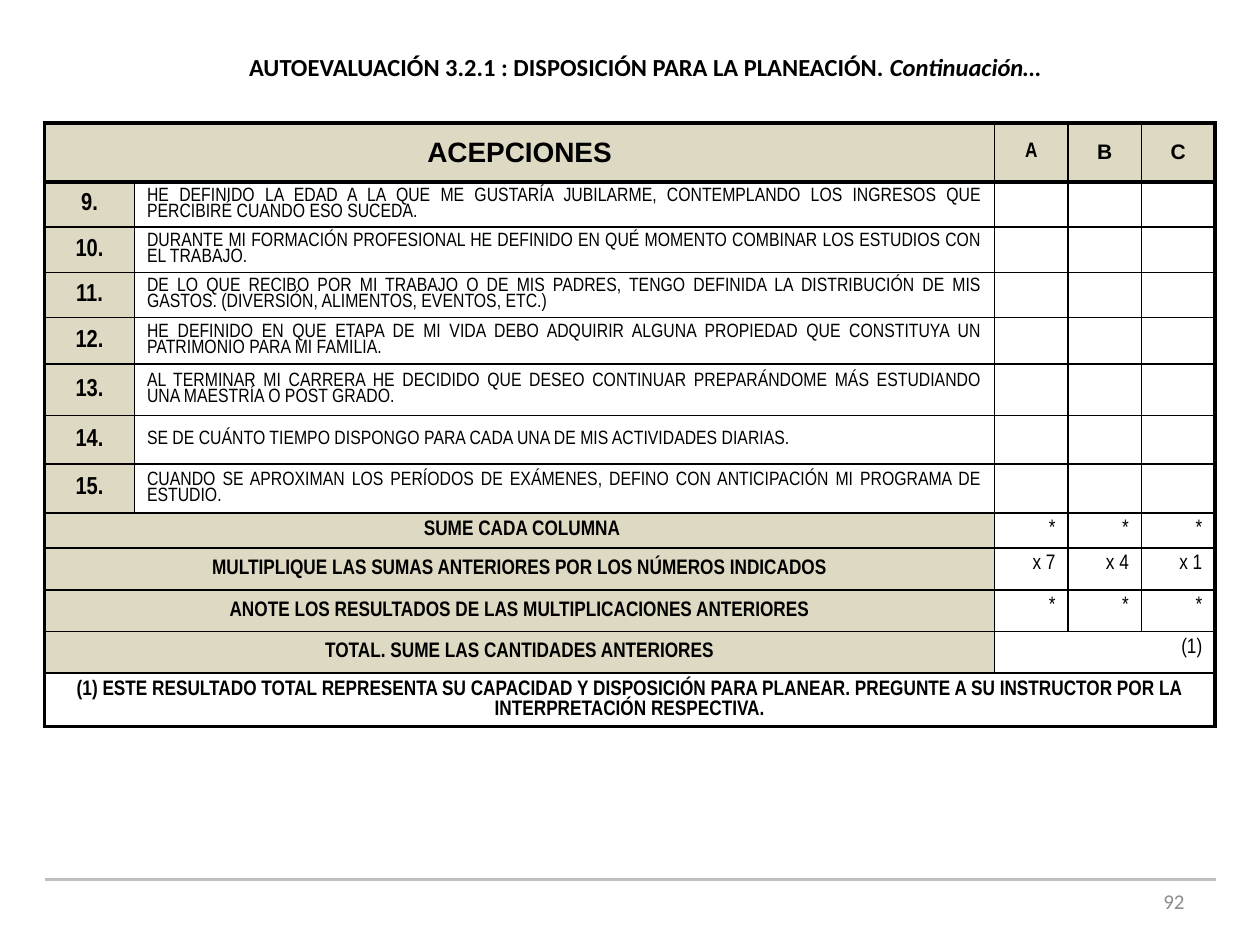
import lxml.etree
import pptx
import pptx.dml.color
import pptx.enum.shapes
import pptx.enum.text
import pptx.oxml.ns
import pptx.util

Cm, Pt = pptx.util.Cm, pptx.util.Pt
Align = pptx.enum.text.PP_ALIGN
Anchor = pptx.enum.text.MSO_ANCHOR
qn = pptx.oxml.ns.qn

THEME = {
    "ink": "000000", "label_fill": "DDD9C3", "rule": "BFBFBF", "page": "8C8C8C",
    "thin": 1, "thick": 2.25, "empty_size": 11,
    "title": {"name": "Calibri", "size": 14, "bold": True, "color": "000000"},
    "number": {"name": "Calibri", "size": 12, "color": "8C8C8C"},
    "heading": {"name": "Arial", "size": 16, "bold": True, "color": "000000"},
    "letter": {"name": "Arial", "size": 12, "bold": True, "color": "000000"},
    "letter_a": {"name": "Arial Narrow", "size": 12, "bold": True, "color": "000000"},
    "item": {"name": "Arial Narrow", "size": 14, "bold": True, "color": "000000"},
    "statement": {"name": "Arial Narrow", "size": 11, "bold": False, "color": "000000"},
    "label": {"name": "Arial Narrow", "size": 12, "bold": True, "color": "000000"},
    "score": {"name": "Arial Narrow", "size": 12, "bold": False, "color": "000000"},
}

TITLE = "AUTOEVALUACIÓN 3.2.1 : DISPOSICIÓN PARA LA PLANEACIÓN. "
TITLE_SUFFIX = "Continuación…"
PAGE_NUMBER = "92"
HEADING = "ACEPCIONES"
LETTERS = [("A", "letter_a"), ("B", "letter"), ("C", "letter")]
FIRST_ITEM = 9
STATEMENTS = [
    "HE DEFINIDO LA EDAD A LA QUE ME GUSTARÍA JUBILARME, CONTEMPLANDO LOS INGRESOS QUE "
    "PERCIBIRÉ CUANDO ESO SUCEDA.",
    "DURANTE MI FORMACIÓN PROFESIONAL HE DEFINIDO EN QUÉ MOMENTO COMBINAR LOS ESTUDIOS CON "
    "EL TRABAJO.",
    "DE LO QUE RECIBO POR MI TRABAJO O DE MIS PADRES, TENGO DEFINIDA LA DISTRIBUCIÓN DE MIS "
    "GASTOS. (DIVERSIÓN, ALIMENTOS, EVENTOS, ETC.)",
    "HE DEFINIDO EN QUE ETAPA DE MI VIDA DEBO ADQUIRIR ALGUNA PROPIEDAD QUE CONSTITUYA UN "
    "PATRIMONIO PARA MI FAMILIA.",
    "AL TERMINAR MI CARRERA HE DECIDIDO QUE DESEO CONTINUAR PREPARÁNDOME MÁS ESTUDIANDO "
    "UNA MAESTRÍA O POST GRADO.",
    "SE DE CUÁNTO TIEMPO DISPONGO PARA CADA UNA DE MIS ACTIVIDADES DIARIAS.",
    "CUANDO SE APROXIMAN LOS PERÍODOS DE EXÁMENES, DEFINO CON ANTICIPACIÓN MI PROGRAMA DE "
    "ESTUDIO.",
]
SUMMARY = [
    (" SUME CADA COLUMNA", ["*", "*", "*"]),
    ("MULTIPLIQUE LAS SUMAS ANTERIORES POR LOS NÚMEROS INDICADOS", ["x 7", "x 4", "x 1"]),
    ("ANOTE LOS RESULTADOS DE LAS MULTIPLICACIONES ANTERIORES", ["*", "*", "*"]),
    ("TOTAL. SUME LAS CANTIDADES ANTERIORES", ["(1)"]),
]
FOOTNOTE = ("(1) ESTE RESULTADO TOTAL REPRESENTA SU CAPACIDAD Y DISPOSICIÓN PARA PLANEAR. "
            "PREGUNTE A SU INSTRUCTOR POR LA INTERPRETACIÓN RESPECTIVA.")

LEFT, TABLE_TOP, RULE_WIDTH = 0.9, 2.48, 23.62
COLUMN_WIDTHS = [1.81, 17.34, 1.48, 1.48, 1.48]
ROW_HEIGHTS = [1.19, 0.91, 0.91, 0.91, 0.94, 1.04, 0.97, 0.99, 0.71, 0.84, 0.84, 0.84, 1.04]
CELL_MARGIN, SCORE_MARGIN_TOP = 0.03, 0.13


def rgb(value):
    return pptx.dml.color.RGBColor.from_string(value)


def add_run(paragraph, text, style, **extra):
    run = paragraph.add_run()
    run.text = text
    for key, value in {**THEME[style], **extra}.items():
        if key == "color":
            run.font.color.rgb = rgb(value)
        else:
            setattr(run.font, key, Pt(value) if key == "size" else value)


def add_text_box(slide, left, top, width, height, align):
    """Add a wrapping, vertically centred box and return its paragraph."""
    frame = slide.shapes.add_textbox(Cm(left), Cm(top), Cm(width), Cm(height)).text_frame
    frame.word_wrap = True
    frame.vertical_anchor = Anchor.MIDDLE
    frame.paragraphs[0].alignment = align
    return frame.paragraphs[0]


def set_borders(cell, weights):
    properties = cell._tc.get_or_add_tcPr()
    for side, weight in weights.items():
        line = lxml.etree.SubElement(properties, qn(f"a:ln{side}"), w=str(Pt(weight)))
        fill = lxml.etree.SubElement(line, qn("a:solidFill"))
        lxml.etree.SubElement(fill, qn("a:srgbClr"), val=THEME["ink"])


def style_grid(table):
    """Draw a thick frame and header rule, thin inner rules, and clear fills."""
    last_row, last_column = len(table.rows) - 1, len(table.columns) - 1
    for row in range(last_row + 1):
        for column in range(last_column + 1):
            cell = table.cell(row, column)
            if not cell.is_spanned:
                end = column + (cell.span_width if cell.is_merge_origin else 1) - 1
                thick_sides = {"L": column == 0, "R": end == last_column,
                               "T": row <= 1, "B": row in (0, last_row)}
                set_borders(cell, {side: THEME["thick" if thick else "thin"]
                                   for side, thick in thick_sides.items()})
            cell.fill.background()
            cell.margin_top = cell.margin_bottom = Cm(CELL_MARGIN)
            # Without this, blank cells take the default size and stretch the row.
            lxml.etree.SubElement(cell.text_frame.paragraphs[0]._p, qn("a:endParaRPr"),
                                  sz=str(THEME["empty_size"] * 100))


def write(cell, text, style, align=Align.CENTER, anchor=Anchor.MIDDLE, fill=None, spacing=None):
    paragraph = cell.text_frame.paragraphs[0]
    for key, value in {"alignment": align, "line_spacing": spacing}.items():
        setattr(paragraph, key, value)
    cell.vertical_anchor = anchor
    add_run(paragraph, text, style)
    if fill:
        cell.fill.solid()
        cell.fill.fore_color.rgb = rgb(fill)


def add_questionnaire(slide):
    table = slide.shapes.add_table(len(ROW_HEIGHTS), len(COLUMN_WIDTHS), Cm(LEFT), Cm(TABLE_TOP),
                                   Cm(sum(COLUMN_WIDTHS)), Cm(sum(ROW_HEIGHTS))).table
    table.first_row = table.horz_banding = False
    for column, width in zip(table.columns, COLUMN_WIDTHS):
        column.width = Cm(width)
    for row, height in zip(table.rows, ROW_HEIGHTS):
        row.height = Cm(height)

    summary_top = 1 + len(STATEMENTS)
    footnote_row = summary_top + len(SUMMARY)
    for row in [0, *range(summary_top, footnote_row)]:
        table.cell(row, 0).merge(table.cell(row, 1))
    table.cell(footnote_row - 1, 2).merge(table.cell(footnote_row - 1, 4))
    table.cell(footnote_row, 0).merge(table.cell(footnote_row, 4))
    style_grid(table)

    tan = THEME["label_fill"]
    write(table.cell(0, 0), HEADING, "heading", fill=tan)
    for column, (letter, style) in enumerate(LETTERS, 2):
        write(table.cell(0, column), letter, style, fill=tan)
    for row, statement in enumerate(STATEMENTS, 1):
        write(table.cell(row, 0), f"{FIRST_ITEM + row - 1}.", "item", fill=tan)
        write(table.cell(row, 1), statement, "statement", Align.JUSTIFY, spacing=0.9)
    for row, (label, scores) in enumerate(SUMMARY, summary_top):
        write(table.cell(row, 0), label, "label", fill=tan)
        for column, score in enumerate(scores, 2):
            cell = table.cell(row, column)
            write(cell, score, "score", Align.RIGHT, Anchor.TOP)
            cell.margin_top = Cm(SCORE_MARGIN_TOP)
    write(table.cell(footnote_row, 0), FOOTNOTE, "label")


def add_footer(slide):
    rule = slide.shapes.add_connector(pptx.enum.shapes.MSO_CONNECTOR.STRAIGHT, Cm(LEFT), Cm(17.73),
                                      Cm(LEFT + RULE_WIDTH), Cm(17.73))
    rule.line.color.rgb = rgb(THEME["rule"])
    rule.line.width = Pt(2)
    lxml.etree.SubElement(rule._element.spPr, qn("a:effectLst"))
    add_run(add_text_box(slide, 18.21, 17.65, 5.92, 1.02, Align.RIGHT), PAGE_NUMBER, "number")


def main():
    deck = pptx.Presentation()
    deck.slide_width, deck.slide_height = Cm(25.4), Cm(19.05)
    slide = deck.slides.add_slide(deck.slide_layouts[6])
    add_footer(slide)
    add_questionnaire(slide)
    title = add_text_box(slide, 1.5, 0.93, 23.01, 0.84, Align.CENTER)
    add_run(title, TITLE, "title")
    add_run(title, TITLE_SUFFIX, "title", italic=True)
    deck.save("out.pptx")


if __name__ == "__main__":
    main()
